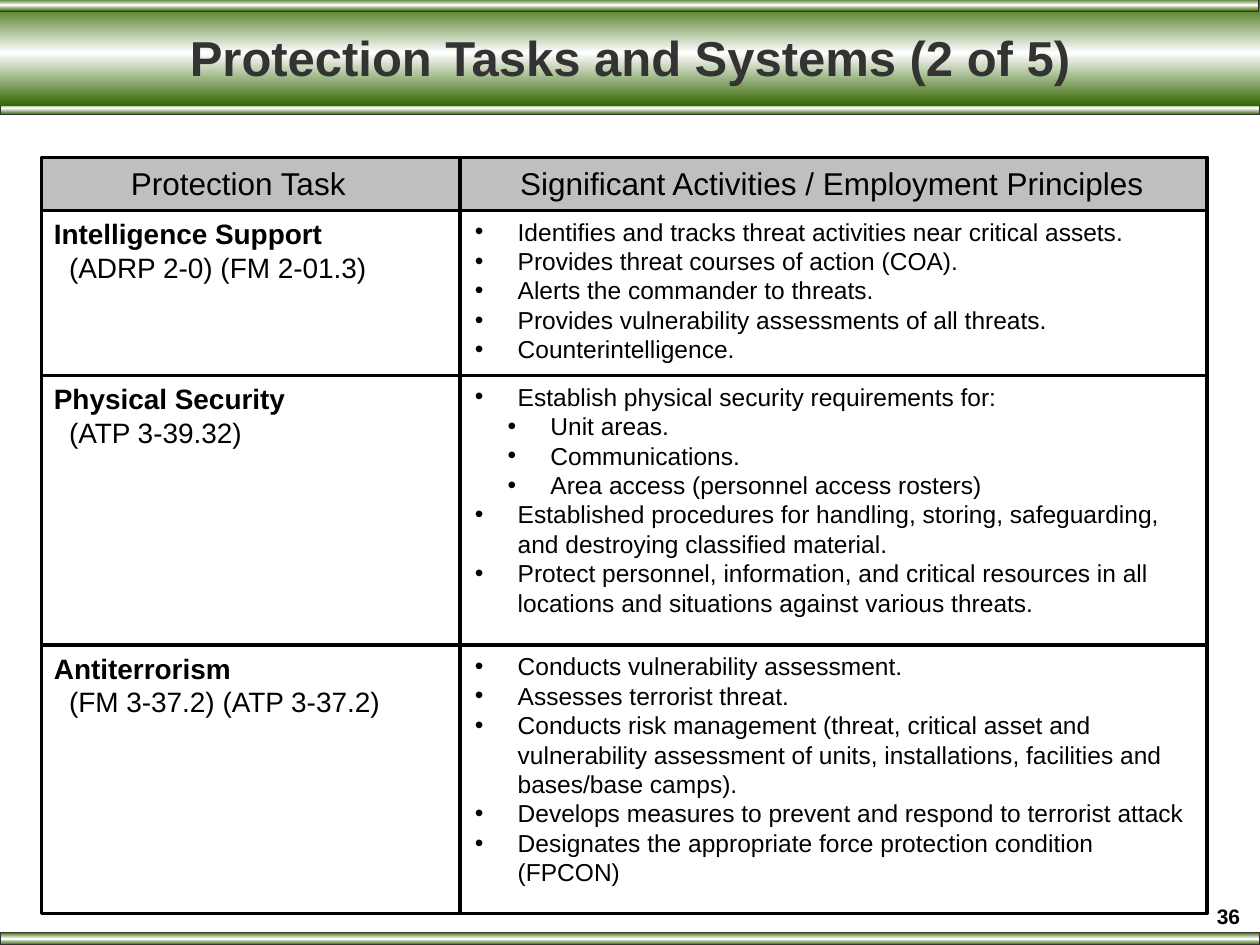
from lxml import etree
from pptx import Presentation
from pptx.dml.color import RGBColor
from pptx.enum.shapes import MSO_CONNECTOR, MSO_SHAPE
from pptx.enum.text import MSO_ANCHOR, MSO_AUTO_SIZE, PP_ALIGN
from pptx.oxml import parse_xml
from pptx.oxml.ns import nsdecls, qn
from pptx.util import Inches, Pt

COLORS = {"green": "336600", "white": "FFFFFF", "dark": "333333",
          "black": "000000", "gray": "808080"}
FONT = "Arial"

LEFT, TOP, WIDTH, BOTTOM = 0.33, 1.25, 9.25, 7.25
COLUMN, TEXT_LEFT = 3.65, 3.67
HEADER_HEIGHT = 0.42
HANG = 0.34

HEADERS = [("Protection Task", 0.94, 1.92),
           ("Significant Activities / Employment Principles", 4.03, 5.19)]

# Row top, task, references, activities as (level, text)
ROWS = [
    (1.67, "Intelligence Support", "(ADRP 2-0) (FM 2-01.3)", [
        (0, "Identifies and tracks threat activities near critical assets."),
        (0, "Provides threat courses of action (COA)."),
        (0, "Alerts the commander to threats."),
        (0, "Provides vulnerability assessments of all threats."),
        (0, "Counterintelligence."),
    ]),
    (2.98, "Physical Security", "(ATP 3-39.32)", [
        (0, "Establish physical security requirements for:"),
        (1, "Unit areas."),
        (1, "Communications."),
        (1, "Area access (personnel access rosters)"),
        (0, "Established procedures for handling, storing, safeguarding, "
            "and destroying classified material."),
        (0, "Protect personnel, information, and critical resources in all "
            "locations and situations against various threats."),
    ]),
    (5.12, "Antiterrorism", "(FM 3-37.2) (ATP 3-37.2)", [
        (0, "Conducts vulnerability assessment."),
        (0, "Assesses terrorist threat."),
        (0, "Conducts risk management (threat, critical asset and "
            "vulnerability assessment of units, installations, facilities "
            "and bases/base camps)."),
        (0, "Develops measures to prevent and respond to terrorist attack"),
        (0, "Designates the appropriate force protection condition (FPCON)"),
    ]),
]


def color(name):
    return RGBColor.from_string(COLORS[name])


def add_rect(page, left, top, width, height, line=None, points=0.75):
    """Add an unfilled rectangle, outlined if a line colour is named."""
    rect = page.shapes.add_shape(MSO_SHAPE.RECTANGLE, Inches(left), Inches(top),
                                 Inches(width), Inches(height))
    rect.shadow.inherit = False
    rect.fill.background()
    if line:
        rect.line.color.rgb = color(line)
        rect.line.width = Pt(points)
    else:
        rect.line.fill.background()
    return rect


def add_band(page, left, top, height, line=None):
    """Add a full-width bar shaded green, white, green from top to bottom."""
    band = add_rect(page, left, top, 10, height, line)
    stops = "".join(
        f'<a:gs pos="{place}"><a:srgbClr val="{COLORS[name]}"/></a:gs>'
        for place, name in [(0, "green"), (50000, "white"), (100000, "green")])
    gradient = parse_xml(
        f'<a:gradFill {nsdecls("a")} rotWithShape="1"><a:gsLst>{stops}</a:gsLst>'
        '<a:lin ang="5400000" scaled="1"/></a:gradFill>')
    properties = band._element.spPr
    properties.replace(properties.find(qn("a:noFill")), gradient)


def add_line(page, x1, y1, x2, y2):
    line = page.shapes.add_connector(MSO_CONNECTOR.STRAIGHT, Inches(x1), Inches(y1),
                                     Inches(x2), Inches(y2))
    line.line.color.rgb = color("black")
    line.line.width = Pt(2)
    etree.SubElement(line._element.spPr, qn("a:effectLst"))


def add_box(page, left, top, width, height, wrap=True):
    box = page.shapes.add_textbox(Inches(left), Inches(top),
                                  Inches(width), Inches(height))
    frame = box.text_frame
    frame.word_wrap = wrap
    frame.auto_size = MSO_AUTO_SIZE.NONE
    return frame


def add_span(para, text, size, bold=False, ink="black"):
    span = para.add_run()
    span.text = text
    span.font.name = FONT
    span.font.size = Pt(size)
    span.font.bold = bold
    span.font.color.rgb = color(ink)


def indent(para, margin, first=0):
    properties = para._p.get_or_add_pPr()
    properties.set("marL", str(Inches(margin)))
    properties.set("indent", str(Inches(first)))
    return properties


def add_bullets(frame, items):
    for index, (level, text) in enumerate(items):
        para = frame.add_paragraph() if index else frame.paragraphs[0]
        para.level = level
        properties = indent(para, HANG + 0.26 * level, -HANG)
        etree.SubElement(properties, qn("a:buFont"), typeface=FONT)
        etree.SubElement(properties, qn("a:buChar"), char="•")
        add_span(para, text, 14)


def add_frame(page):
    """Draw the outline, header strip and dividers of the grid."""
    add_rect(page, LEFT, TOP, WIDTH, BOTTOM - TOP, "black", 2)
    strip = add_rect(page, LEFT, TOP, WIDTH, HEADER_HEIGHT, "black", 2)
    strip.fill.solid()
    strip.fill.fore_color.rgb = color("gray")
    tint = strip._element.spPr.find(qn("a:solidFill"))[0]
    etree.SubElement(tint, qn("a:alpha"), val="50000")
    add_line(page, COLUMN, TOP, COLUMN, BOTTOM)
    for top, *_ in ROWS[1:]:
        add_line(page, LEFT, top, LEFT + WIDTH, top)


def add_row(page, top, task, references, activities):
    label = add_box(page, LEFT, top, 2.83, 0.64, wrap=False)
    add_span(label.paragraphs[0], task, 16, bold=True)
    para = label.add_paragraph()
    indent(para, 0.12)
    add_span(para, references, 16)
    height = 1.28 if len(activities) == 5 and top < 2 else 1.99
    add_bullets(add_box(page, TEXT_LEFT, top, 5.92, height), activities)


def main():
    deck = Presentation()
    deck.slide_width, deck.slide_height = Inches(10), Inches(7.5)
    page = deck.slides.add_slide(deck.slide_layouts[6])

    add_band(page, 0, 0.81, 0.1, "dark")
    add_band(page, 0, 7.4, 0.1, "dark")
    add_band(page, 0, 0, 0.84)
    add_band(page, -0.01, -0.01, 0.1, "dark")

    number = add_box(page, 9.5, 7.12, 0.5, 0.33).paragraphs[0]
    number.alignment = PP_ALIGN.CENTER
    add_span(number, "36", 12, bold=True)

    title = add_box(page, 0.5, 0.08, 9, 0.75)
    title.vertical_anchor = MSO_ANCHOR.MIDDLE
    title.paragraphs[0].alignment = PP_ALIGN.CENTER
    add_span(title.paragraphs[0], "Protection Tasks and Systems (2 of 5)", 28,
             bold=True, ink="dark")

    add_frame(page)
    for text, left, width in HEADERS:
        header = add_box(page, left, TOP, width, 0.4, wrap=False)
        add_span(header.paragraphs[0], text, 18)
    for row in ROWS:
        add_row(page, *row)

    deck.save("out.pptx")


if __name__ == "__main__":
    main()
